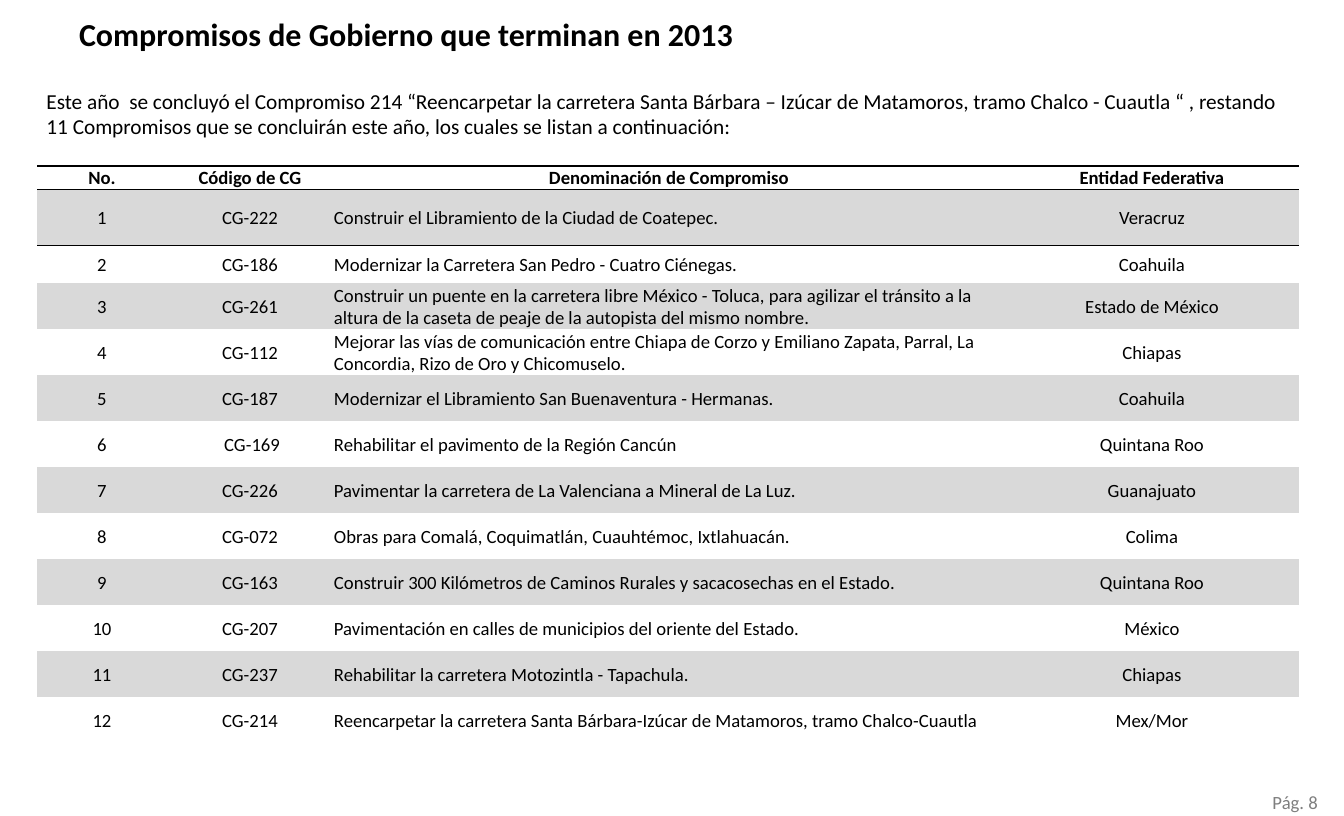
import pptx
import pptx.dml.color
import pptx.enum.text
import pptx.oxml
import pptx.oxml.ns
import pptx.util

PX = 9525  # EMU per pixel at 96 px to the inch
COLORS = {"text": "000000", "band": "D9D9D9", "plain": "FFFFFF", "page": "7F7F7F"}
NO_STYLE = "{2D5ABB26-0587-4C30-8999-92F81FD0307C}"
ALIGN = pptx.enum.text.PP_ALIGN
MIDDLE = pptx.enum.text.MSO_ANCHOR.MIDDLE

COLUMN_WIDTHS = [130, 166, 672, 294]
ROW_HEIGHTS = [23, 56, 38] + [46] * 10
HEADER = ["No.", "Código de CG", "Denominación de Compromiso", "Entidad Federativa"]
COMMITMENTS = [
    ("CG-222", "Construir el Libramiento de la Ciudad de Coatepec.", "Veracruz"),
    ("CG-186", "Modernizar la Carretera San Pedro - Cuatro Ciénegas.", "Coahuila"),
    ("CG-261", "Construir un puente en la carretera libre México - Toluca, para agilizar el tránsito "
     "a la altura de la caseta de peaje de la autopista del mismo nombre.", "Estado de México"),
    ("CG-112", "Mejorar las vías de comunicación entre Chiapa de Corzo y Emiliano Zapata, Parral, "
     "La Concordia, Rizo de Oro y Chicomuselo.", "Chiapas"),
    ("CG-187", "Modernizar el Libramiento San Buenaventura - Hermanas.", "Coahuila"),
    (" CG-169", "Rehabilitar el pavimento de la Región Cancún", "Quintana Roo"),
    ("CG-226", "Pavimentar la carretera de La Valenciana a Mineral de La Luz.", "Guanajuato"),
    ("CG-072", "Obras para Comalá, Coquimatlán, Cuauhtémoc, Ixtlahuacán.", "Colima"),
    ("CG-163", "Construir 300 Kilómetros de Caminos Rurales y sacacosechas en el Estado.", "Quintana Roo"),
    ("CG-207", "Pavimentación en calles de municipios del oriente del Estado.", "México"),
    ("CG-237", "Rehabilitar la carretera Motozintla - Tapachula.", "Chiapas"),
    ("CG-214", "Reencarpetar la carretera Santa Bárbara-Izúcar de Matamoros, tramo Chalco-Cuautla", "Mex/Mor"),
]


def write(frame, text, size, color="text", bold=False, align=ALIGN.LEFT):
    para = frame.paragraphs[0]
    para.text = text
    para.alignment = align
    para.font.name = "Calibri"
    para.font.size = pptx.util.Pt(size)
    para.font.bold = bold
    para.font.color.rgb = pptx.dml.color.RGBColor.from_string(COLORS[color])


def add_border(cell, side):
    """Draw a 1 pt line on one side of a cell; side is T or B."""
    cell._tc.get_or_add_tcPr().append(pptx.oxml.parse_xml(
        f'<a:ln{side} {pptx.oxml.ns.nsdecls("a")} w="12700"><a:solidFill>'
        f'<a:srgbClr val="{COLORS["text"]}"/></a:solidFill></a:ln{side}>'))


deck = pptx.Presentation()
deck.slide_width = 1344 * PX
deck.slide_height = 816 * PX
slide = deck.slides.add_slide(deck.slide_layouts[6])

# Page number
page_box = slide.shapes.add_textbox(1236 * PX, 785 * PX, 94 * PX, 35 * PX)
page_box.text_frame.margin_left = page_box.text_frame.margin_right = 12 * PX
page_box.text_frame.margin_top = page_box.text_frame.margin_bottom = 6 * PX
write(page_box.text_frame, "Pág. 8", 14, "page", align=ALIGN.RIGHT)

# Title
title_box = slide.shapes.add_textbox(67 * PX, 0, 1210 * PX, 68 * PX)
title_box.text_frame.word_wrap = True
title_box.text_frame.vertical_anchor = MIDDLE
title_box.text_frame.margin_left = title_box.text_frame.margin_right = 12 * PX
write(title_box.text_frame, "Compromisos de Gobierno que terminan en 2013", 24, bold=True)

# Table of commitments
rows = [HEADER] + [(str(number), *entry) for number, entry in enumerate(COMMITMENTS, 1)]
table_frame = slide.shapes.add_table(
    len(rows), len(HEADER), 37 * PX, 166 * PX, sum(COLUMN_WIDTHS) * PX, sum(ROW_HEIGHTS) * PX)
table = table_frame.table
table._tbl.tblPr.find(pptx.oxml.ns.qn("a:tableStyleId")).text = NO_STYLE
for column, width in zip(table.columns, COLUMN_WIDTHS):
    column.width = width * PX
for row_index, values in enumerate(rows):
    table.rows[row_index].height = ROW_HEIGHTS[row_index] * PX
    is_header = row_index == 0
    for column_index, value in enumerate(values):
        cell = table.cell(row_index, column_index)
        cell.margin_left = cell.margin_right = cell.margin_top = 1 * PX
        cell.margin_bottom = 0
        cell.vertical_anchor = MIDDLE
        if row_index < 2:
            add_border(cell, "T")
        if is_header:
            add_border(cell, "B")
        cell.fill.solid()
        cell.fill.fore_color.rgb = pptx.dml.color.RGBColor.from_string(
            COLORS["band" if row_index % 2 else "plain"])
        is_name = column_index == 2 and not is_header
        write(cell.text_frame, value, 14, bold=is_header,
              align=ALIGN.LEFT if is_name else ALIGN.CENTER)

# Introduction
intro_box = slide.shapes.add_textbox(37 * PX, 83 * PX, 1262 * PX, 61 * PX)
intro_box.text_frame.word_wrap = True
write(intro_box.text_frame,
      "Este año  se concluyó el Compromiso 214 “Reencarpetar la carretera Santa Bárbara – Izúcar de "
      "Matamoros, tramo Chalco - Cuautla “ , restando 11 Compromisos que se concluirán este año, "
      "los cuales se listan a continuación:", 16)

deck.save("out.pptx")
